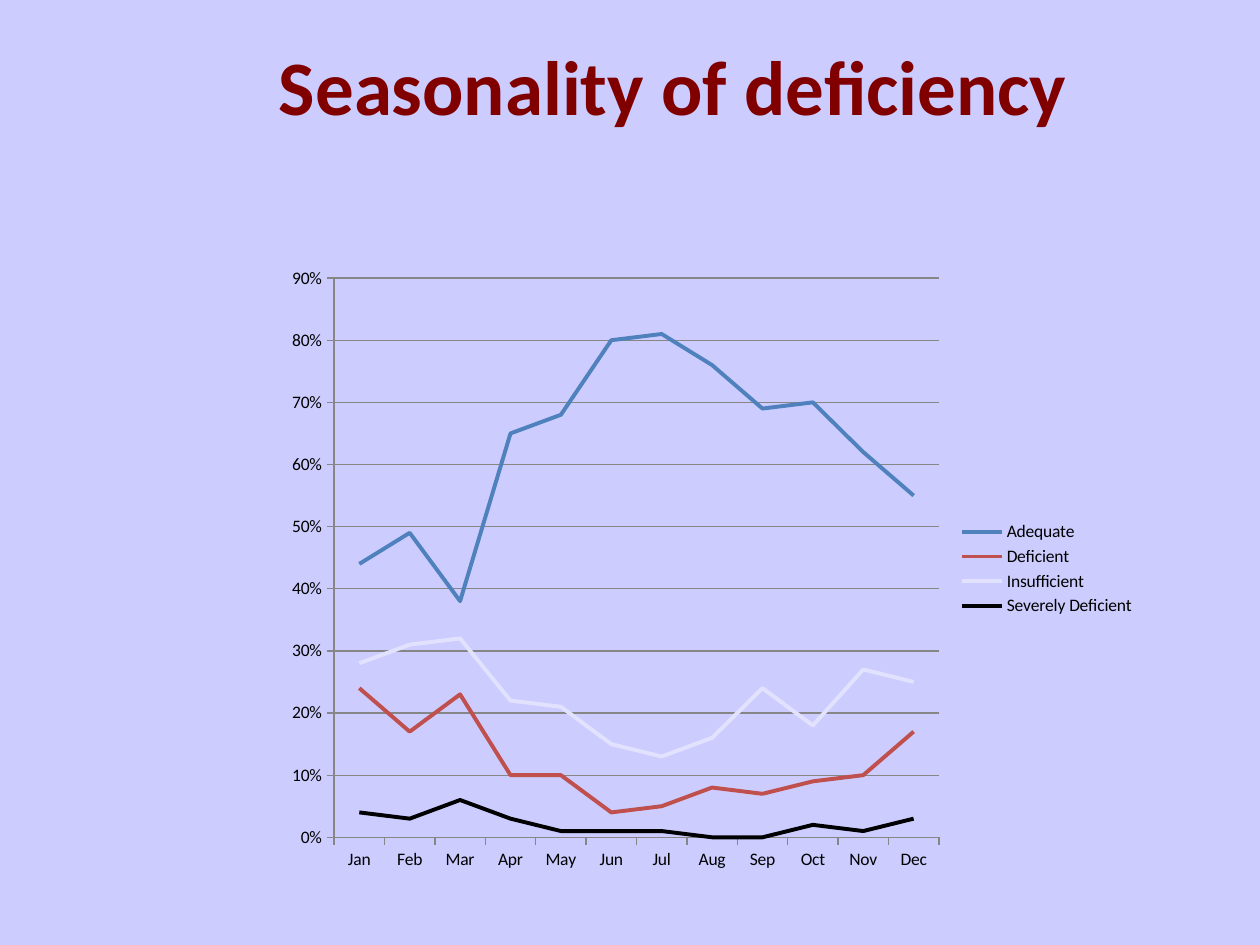
import pptx
import pptx.util
import pptx.chart.data
import pptx.dml.color
import pptx.enum.chart
import pptx.enum.text

TITLE = "Seasonality of deficiency"
MONTHS = "Jan Feb Mar Apr May Jun Jul Aug Sep Oct Nov Dec".split()
# name, colour, share of each month
LEVELS = [
    ("Adequate", "4F81BD",
     [.44, .49, .38, .65, .68, .80, .81, .76, .69, .70, .62, .55]),
    ("Deficient", "C0504D",
     [.24, .17, .23, .10, .10, .04, .05, .08, .07, .09, .10, .17]),
    ("Insufficient", "E2E2FF",
     [.28, .31, .32, .22, .21, .15, .13, .16, .24, .18, .27, .25]),
    ("Severely Deficient", "000000",
     [.04, .03, .06, .03, .01, .01, .01, 0, 0, .02, .01, .03]),
]
THEME = dict(font="Calibri", back="CCCCFF", head="800000", text="000000",
             grid="868686", title=44, label=10, curve=2.25, rule=0.75)
WIDE, HIGH = 10, 7.5
TITLE_BOX = (1.08, 0.08, 8.53, 1.18)
CHART_BOX = (2.18, 2.03, 6.93, 4.97)


def color(code):
    return pptx.dml.color.RGBColor.from_string(code)


def inches(box):
    return [pptx.util.Inches(side) for side in box]


def style(font, size, code, bold=False):
    font.name, font.size, font.bold = THEME["font"], pptx.util.Pt(size), bold
    font.color.rgb = color(code)


def stroke(line, code, width):
    line.color.rgb = color(code)
    line.width = pptx.util.Pt(width)


def add_title(slide):
    title = slide.shapes.title
    title.left, title.top, title.width, title.height = inches(TITLE_BOX)
    frame = title.text_frame
    frame.text = TITLE
    frame.vertical_anchor = pptx.enum.text.MSO_ANCHOR.MIDDLE
    para = frame.paragraphs[0]
    para.alignment = pptx.enum.text.PP_ALIGN.CENTER
    style(para.runs[0].font, THEME["title"], THEME["head"], True)


def add_chart(slide):
    data = pptx.chart.data.CategoryChartData(number_format="0%")
    data.categories = MONTHS
    for name, _, shares in LEVELS:
        data.add_series(name, shares)
    kind = pptx.enum.chart.XL_CHART_TYPE.LINE
    chart = slide.shapes.add_chart(kind, *inches(CHART_BOX), data).chart
    style(chart.font, THEME["label"], THEME["text"])
    chart.has_title = False
    chart.has_legend = True
    chart.legend.position = pptx.enum.chart.XL_LEGEND_POSITION.RIGHT
    chart.legend.include_in_layout = False

    plot = chart.plots[0]
    plot.vary_by_categories = False
    for curve, (_, code, _) in zip(plot.series, LEVELS):
        curve.smooth = False
        curve.marker.style = pptx.enum.chart.XL_MARKER_STYLE.NONE
        stroke(curve.format.line, code, THEME["curve"])

    rows = chart.value_axis
    rows.minimum_scale, rows.maximum_scale, rows.major_unit = 0, 0.9, 0.1
    rows.tick_labels.number_format = "0%"
    rows.tick_labels.number_format_is_linked = False
    rows.has_major_gridlines = True
    for part in (rows, chart.category_axis, rows.major_gridlines):
        stroke(part.format.line, THEME["grid"], THEME["rule"])
    for axis in (rows, chart.category_axis):
        axis.major_tick_mark = pptx.enum.chart.XL_TICK_MARK.OUTSIDE


def main():
    deck = pptx.Presentation()
    deck.slide_width, deck.slide_height = inches((WIDE, HIGH))
    slide = deck.slides.add_slide(deck.slide_layouts[5])
    slide.background.fill.solid()
    slide.background.fill.fore_color.rgb = color(THEME["back"])
    add_title(slide)
    add_chart(slide)
    deck.save("out.pptx")


if __name__ == "__main__":
    main()
